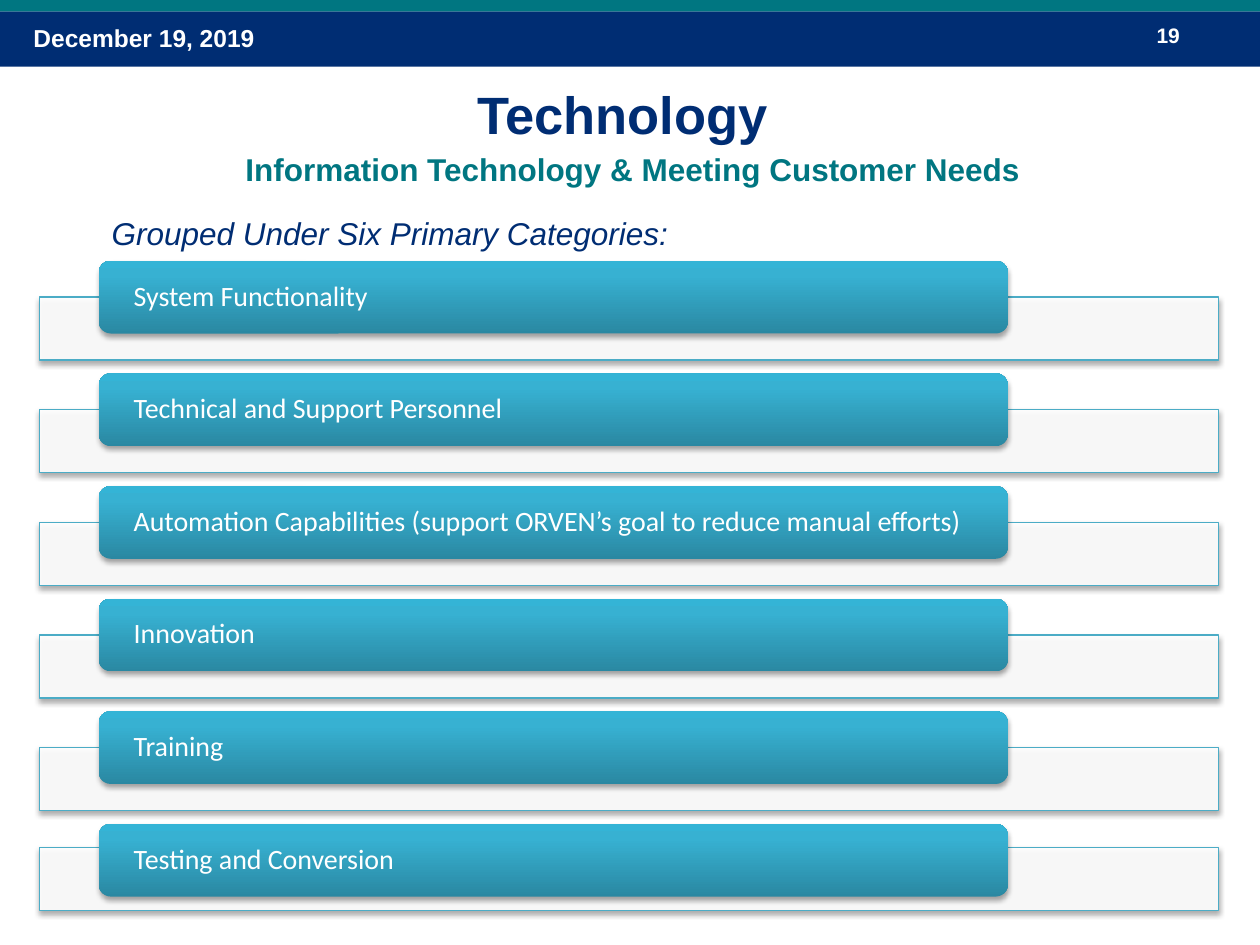
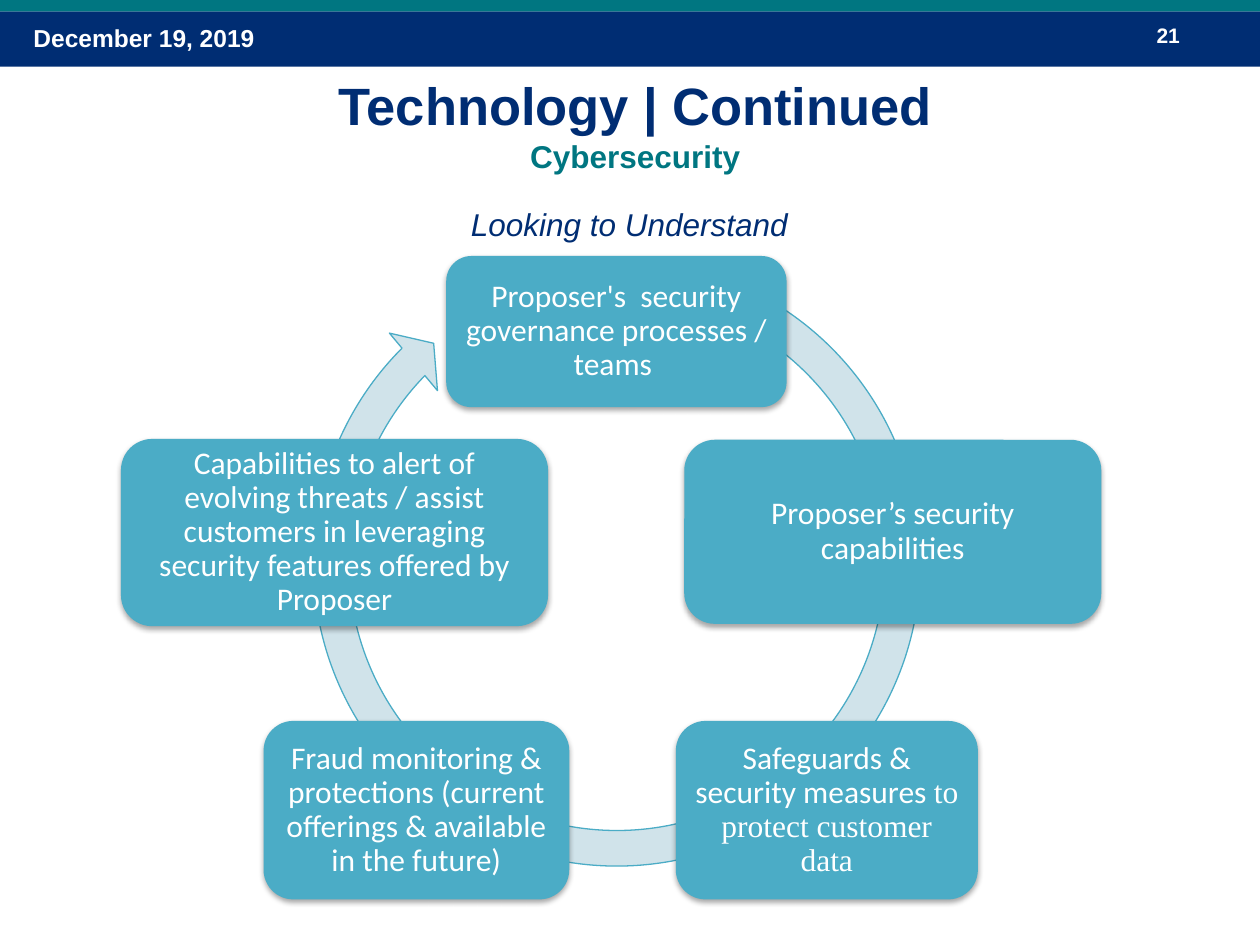
from copy import deepcopy
from dataclasses import dataclass

from lxml.etree import SubElement
from pptx import Presentation
from pptx.dml.color import RGBColor
from pptx.enum.shapes import MSO_SHAPE
from pptx.enum.text import MSO_ANCHOR, MSO_AUTO_SIZE, PP_ALIGN
from pptx.oxml.ns import qn
from pptx.util import Pt


@dataclass(frozen=True)
class Theme:
    """Colours, fonts and type sizes of the deck."""
    navy: str = "002D73"
    teal: str = "007681"
    sky: str = "4BACC6"
    pale: str = "D0E3EA"
    white: str = "FFFFFF"
    black: str = "000000"
    bar_gradient: tuple = ((0, "2A88A2"), (0.8, "37B1D2"), (1, "34B4D6"))
    heading: str = "Arial"
    body: str = "Calibri"
    serif: str = "Times New Roman"
    title: int = 30
    text: int = 18
    bar: int = 16
    date: int = 14
    number: int = 12


THEME = Theme()
DATE = "December 19, 2019"
TITLE = dict(name=THEME.heading, size=Pt(THEME.title), bold=True, color=THEME.navy)
SUBTITLE = dict(name=THEME.heading, size=Pt(THEME.text), bold=True, color=THEME.teal)
LEAD_IN = dict(name=THEME.heading, size=Pt(THEME.text), italic=True, color=THEME.navy)
DATE_STYLE = dict(name=THEME.heading, size=Pt(THEME.date), bold=True, color=THEME.white)
NUMBER_STYLE = dict(DATE_STYLE, size=Pt(THEME.number))
BAR_STYLE = dict(name=THEME.body, size=Pt(THEME.bar), color=THEME.white)
CARD_STYLE = dict(name=THEME.body, size=Pt(THEME.text), color=THEME.white)

CATEGORIES = (
    "System Functionality",
    "Technical and Support Personnel",
    "Automation Capabilities (support ORVEN’s goal to reduce manual efforts)",
    "Innovation",
    "Training",
    "Testing and Conversion",
)
FIRST_BAR_TOP, BAR_PITCH = 149, 64.35
TRAY_DROP, LAST_TRAY_DROP = 20.8, 13.7

CYCLE_STEPS = (
    ((255, 146.3, 194.5, 86.4), [("Proposer's  security governance processes / teams ", {})]),
    ((391, 251.3, 238.3, 105.2), [("Proposer’s security capabilities", {})]),
    ((386.2, 412, 172.6, 102), [("Safeguards & security measures ", {}),
                                ("to protect customer data", {"name": THEME.serif})]),
    ((150.6, 412, 174.7, 102), [("Fraud monitoring & protections (current offerings "
                                 "& available in the future)", {})]),
    ((69.1, 250.8, 244.1, 107), [("Capabilities to alert of evolving threats / assist customers in "
                                  "leveraging security features offered by Proposer", {})]),
)
CYCLE_ARROW = (0.055, 3.307, 134.77, 175.707, 0.058)


def set_all(target, values):
    """Set every attribute in values on the target."""
    for key, value in values.items():
        setattr(target, key, value)


def write(holder, runs, style, align=PP_ALIGN.LEFT, spacing=1.0, **frame_format):
    """Fill one paragraph with (text, overrides) runs."""
    frame = holder.text_frame
    set_all(frame, dict(word_wrap=True, auto_size=MSO_AUTO_SIZE.NONE) | frame_format)
    paragraph = frame.paragraphs[0]
    set_all(paragraph, dict(alignment=align, line_spacing=spacing))
    for text, overrides in runs:
        run = paragraph.add_run()
        run.text = text
        font_format = style | overrides
        color = font_format.pop("color")
        set_all(run.font, font_format)
        run.font.color.rgb = RGBColor.from_string(color)


def add_label(slide, box, text, style, align=PP_ALIGN.LEFT):
    """Add a text box holding one line."""
    label = slide.shapes.add_textbox(*map(Pt, box))
    write(label, [(text, {})], style, align)


def add_panel(slide, kind, box, fill, outline=None):
    """Add a filled preset shape, outlined when a colour is given."""
    panel = slide.shapes.add_shape(kind, *map(Pt, box))
    panel.shadow.inherit = False
    panel.fill.solid()
    panel.fill.fore_color.rgb = RGBColor.from_string(fill)
    if outline:
        panel.line.color.rgb = RGBColor.from_string(outline)
        panel.line.width = Pt(0.75)
    else:
        panel.line.fill.background()
    return panel


def set_alpha(color_element, percent):
    """Give a colour element an opacity in percent."""
    SubElement(color_element, qn("a:alpha"), val=str(percent * 1000))


def drop_shadow(panel):
    """Cast a soft shadow straight down."""
    effects = panel._element.spPr.find(qn("a:effectLst"))
    shadow = SubElement(effects, qn("a:outerShdw"), blurRad=str(Pt(3.1)), dist=str(Pt(1.8)),
                        dir="5400000", rotWithShape="0")
    set_alpha(SubElement(shadow, qn("a:srgbClr"), val=THEME.black), 35)


def shade_bar(bar):
    """Apply the bar gradient, dark at the bottom."""
    bar.fill.gradient()
    bar.fill.gradient_angle = 90
    stop_list = bar._element.spPr.find(".//" + qn("a:gsLst"))
    stop_list.append(deepcopy(stop_list[-1]))
    for stop, (position, color) in zip(bar.fill.gradient_stops, THEME.bar_gradient):
        stop.position = position
        stop.color.rgb = RGBColor.from_string(color)


def add_titled_slide(deck, number, title, title_box):
    """Add a slide with the header bands, date, number and title."""
    slide = deck.slides.add_slide(deck.slide_layouts[5])
    add_panel(slide, MSO_SHAPE.RECTANGLE, (0, 6.5, 720, 31.7), THEME.navy)
    add_panel(slide, MSO_SHAPE.RECTANGLE, (0, 0, 720, 6.5), THEME.teal)
    add_label(slide, (12, 9.4, 168, 28.8), DATE, DATE_STYLE)
    add_label(slide, (653.8, 9.4, 54, 28.8), number, NUMBER_STYLE)
    heading = slide.shapes.title
    set_all(heading, dict(zip(("left", "top", "width", "height"), map(Pt, title_box))))
    write(heading, [(title, {})], TITLE, PP_ALIGN.CENTER, vertical_anchor=MSO_ANCHOR.TOP)
    return slide


def add_category(slide, top, tray_drop, name):
    """Add a category bar lying over its tray."""
    tray = add_panel(slide, MSO_SHAPE.RECTANGLE, (22.5, top + tray_drop, 674, 36),
                     THEME.white, THEME.sky)
    set_alpha(tray._element.spPr.find(qn("a:solidFill"))[0], 90)
    drop_shadow(tray)
    bar = add_panel(slide, MSO_SHAPE.ROUNDED_RECTANGLE, (56.4, top, 519.6, 41.6), THEME.sky)
    shade_bar(bar)
    drop_shadow(bar)
    write(bar, [(name, {})], BAR_STYLE, spacing=0.9, vertical_anchor=MSO_ANCHOR.MIDDLE,
          margin_left=Pt(18), margin_right=Pt(18), margin_top=0, margin_bottom=0)


def add_cycle_step(slide, box, runs):
    """Add one rounded card of the cycle."""
    card = add_panel(slide, MSO_SHAPE.ROUNDED_RECTANGLE, box, THEME.sky)
    drop_shadow(card)
    margins = {f"margin_{side}": Pt(5) for side in ("left", "right", "top", "bottom")}
    write(card, runs, CARD_STYLE, PP_ALIGN.CENTER, 0.9,
          vertical_anchor=MSO_ANCHOR.MIDDLE, **margins)


def build_categories(deck):
    """Build the slide of six categories."""
    slide = add_titled_slide(deck, "19", "Technology ", (36, 43.2, 648, 90))
    add_label(slide, (133.2, 82.1, 520, 28.8),
              "Information Technology & Meeting Customer Needs", SUBTITLE)
    add_label(slide, (0, 118.8, 445.7, 28.8), "Grouped Under Six Primary Categories:",
              LEAD_IN, PP_ALIGN.CENTER)
    for index, name in enumerate(CATEGORIES):
        is_last = index == len(CATEGORIES) - 1
        add_category(slide, FIRST_BAR_TOP + index * BAR_PITCH,
                     LAST_TRAY_DROP if is_last else TRAY_DROP, name)


def build_cybersecurity(deck):
    """Build the slide of the cybersecurity cycle."""
    slide = add_titled_slide(deck, "21", "Technology | Continued", (12.2, 38.2, 702, 65.5))
    add_label(slide, (295.9, 74.9, 200, 28.8), "Cybersecurity", SUBTITLE)
    add_label(slide, (78.5, 113.8, 562.3, 28.8), "Looking to Understand",
              LEAD_IN, PP_ALIGN.CENTER)
    cycle = add_panel(slide, MSO_SHAPE.CIRCULAR_ARROW, (167.8, 136.8, 369.4, 369.4),
                      THEME.pale, THEME.sky)
    for index, value in enumerate(CYCLE_ARROW):
        cycle.adjustments[index] = value
    for box, runs in CYCLE_STEPS:
        add_cycle_step(slide, box, runs)


def main():
    """Build and save the deck."""
    deck = Presentation()
    set_all(deck, dict(slide_width=Pt(720), slide_height=Pt(540)))
    build_categories(deck)
    build_cybersecurity(deck)
    deck.save("out.pptx")


if __name__ == "__main__":
    main()
